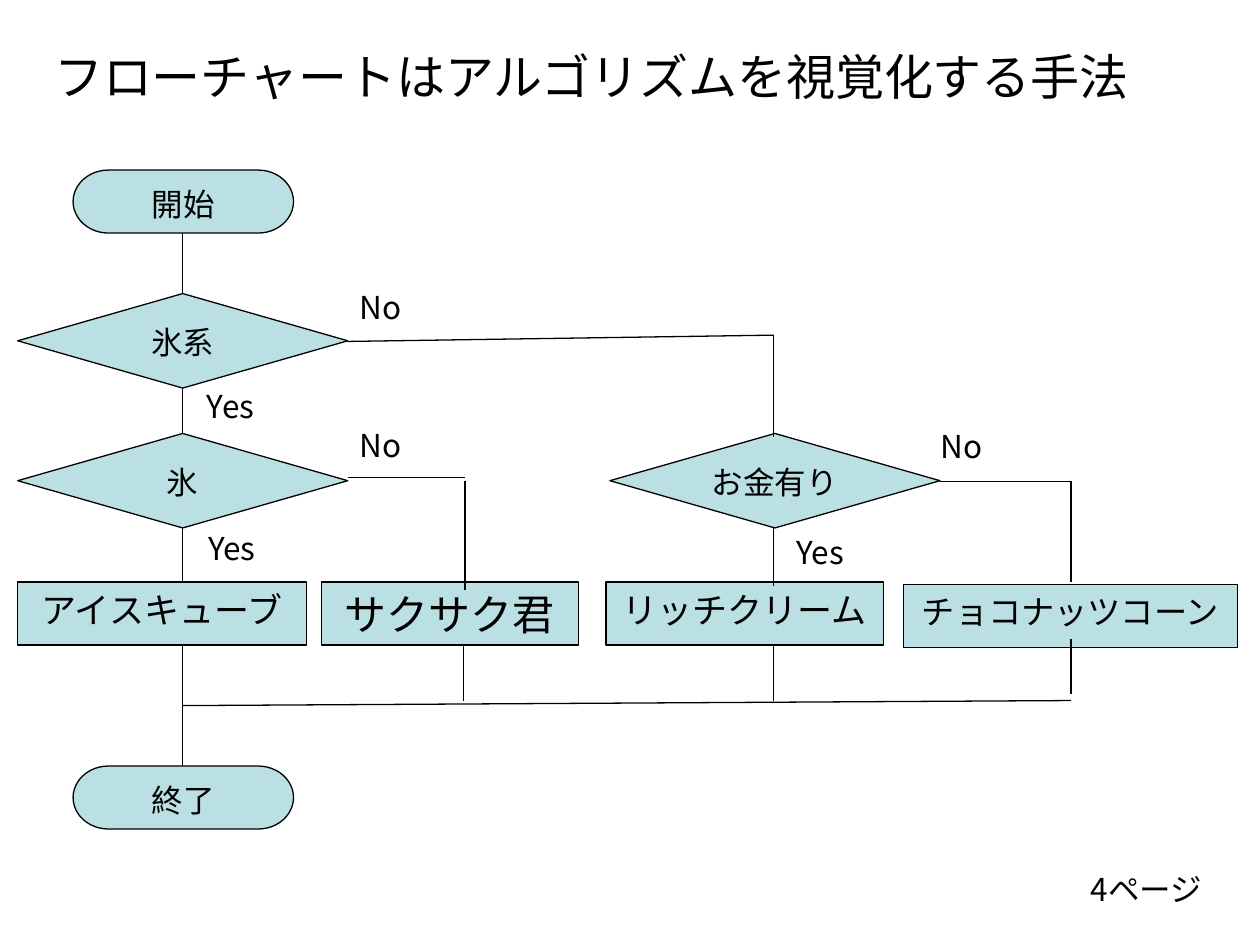
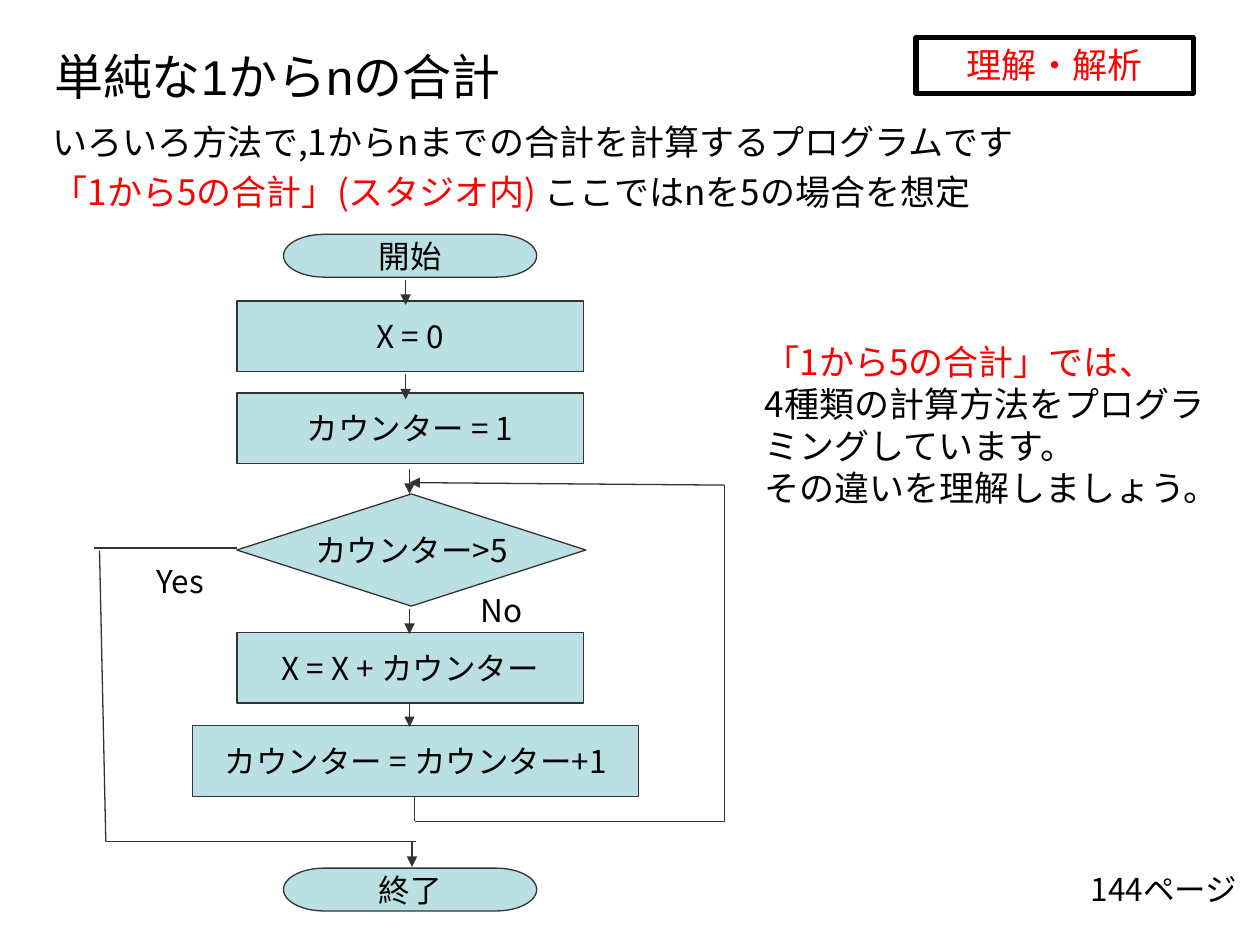
from lxml.etree import SubElement
from pptx import Presentation
from pptx.dml.color import RGBColor
from pptx.enum.shapes import MSO_CONNECTOR, MSO_SHAPE
from pptx.enum.text import MSO_ANCHOR, MSO_AUTO_SIZE, PP_ALIGN
from pptx.oxml.ns import qn
from pptx.util import Inches, Pt

BLACK = RGBColor(0x00, 0x00, 0x00)
DARK_GRAY = RGBColor(0x33, 0x33, 0x33)
PALE_TEAL = RGBColor(0xBB, 0xE0, 0xE3)
RED = RGBColor(0xFF, 0x00, 0x00)
TITLE_FONT = "Arial"
BODY_FONT = "Noto Sans CJK JP"
TERMINATOR = MSO_SHAPE.FLOWCHART_TERMINATOR
DECISION = MSO_SHAPE.FLOWCHART_DECISION
PROCESS = MSO_SHAPE.FLOWCHART_PROCESS


def add_run(paragraph, text, size=18, color=BLACK, font=BODY_FONT):
    run = paragraph.add_run()
    run.text = text
    run.font.size = Pt(size)
    run.font.name = font
    run.font.color.rgb = color
    SubElement(run._r.get_or_add_rPr(), qn("a:ea"), typeface=BODY_FONT)


def add_link(slide, x1, y1, x2, y2, color, arrow=False):
    link = slide.shapes.add_connector(
        MSO_CONNECTOR.STRAIGHT, Inches(x1), Inches(y1), Inches(x2), Inches(y2))
    link.line.color.rgb = color
    link.line.width = Pt(0.75)
    if arrow:
        SubElement(link.line._get_or_add_ln(), qn("a:tailEnd"), type="triangle")
    SubElement(link._element.spPr, qn("a:effectLst"))


trunk_x, branch_x, cone_x = 1.45, 6.14, 8.5
ice_cream_chart = {
    "title": "フローチャートはアルゴリズムを視覚化する手法",
    "color": BLACK,
    "anchor": MSO_ANCHOR.TOP,
    "wrap": True,
    "trunk": [(trunk_x, 1.85, trunk_x, 4.62)],
    "steps": [
        (TERMINATOR, 0.58, 1.35, 1.75, 0.5, "開始", 18),
        (TERMINATOR, 0.58, 6.08, 1.75, 0.5, "終了", 18),
        (DECISION, 0.14, 2.33, 2.62, 0.75, "氷系", 18),
        (DECISION, 0.14, 3.44, 2.62, 0.75, "氷", 18),
        (DECISION, 4.84, 3.44, 2.62, 0.75, "お金有り", 18),
        (PROCESS, 0.14, 4.62, 2.29, 0.5, "アイスキューブ", 20),
        (PROCESS, 2.55, 4.62, 2.04, 0.5, "サクサク君", 24),
        (PROCESS, 4.81, 4.62, 2.2, 0.5, "リッチクリーム", 20),
        (PROCESS, 7.17, 4.64, 2.65, 0.5, "チョコナッツコーン", 19),
    ],
    "links": [
        (branch_x, 4.19, branch_x, 4.65),
        (3.69, 3.82, 3.69, 4.68),
        (cone_x, 3.82, cone_x, 4.62),
        (2.76, 3.79, 3.69, 3.79),
        (7.46, 3.82, cone_x, 3.82),
        (branch_x, 2.66, branch_x, 3.47),
        (2.76, 2.71, branch_x, 2.66),
        (trunk_x, 5.12, trunk_x, 6.08),
        (3.68, 5.12, 3.68, 5.56),
        (branch_x, 5.12, branch_x, 5.56),
        (cone_x, 5.07, cone_x, 5.51),
        (trunk_x, 5.6, cone_x, 5.56),
    ],
    "arrows": [],
    "answers": [
        (1.33, 3.02, 1, "Yes"), (1.34, 4.15, 1, "Yes"), (6.01, 4.18, 1, "Yes"),
        (2.52, 2.24, 1, "No"), (2.52, 3.33, 1, "No"), (7.13, 3.34, 1, "No"),
    ],
    "page": "4ページ",
}

loop_x, exit_x = 5.75, 0.84
arrow_length = 0.2
sum_chart = {
    "title": "単純な1からnの合計",
    "color": DARK_GRAY,
    "anchor": MSO_ANCHOR.MIDDLE,
    "wrap": False,
    "trunk": [],
    "steps": [
        (TERMINATOR, 2.25, 1.86, 2.01, 0.34, "開始", 18),
        (PROCESS, 1.88, 2.39, 2.75, 0.56, "X = 0", 18),
        (PROCESS, 1.88, 3.12, 2.75, 0.56, "カウンター = 1", 18),
        (DECISION, 1.88, 3.92, 2.77, 0.89, "カウンター>5", 18),
        (PROCESS, 1.88, 5.02, 2.75, 0.56, "X = X + カウンター", 18),
        (PROCESS, 1.53, 5.76, 3.54, 0.56, "カウンター = カウンター+1", 18),
        (TERMINATOR, 2.25, 6.89, 2.01, 0.34, "終了", 18),
    ],
    "links": [
        (loop_x, 3.85, loop_x, 6.52),
        (3.29, 6.32, 3.29, 6.52),
        (loop_x, 6.52, 3.29, 6.52),
        (1.88, 4.35, 0.75, 4.35),
        (0.79, 4.37, exit_x, 6.68),
        (3.3, 6.68, exit_x, 6.68),
    ],
    "arrows": [(loop_x, 3.85, 3.25, 3.83)] + [
        (x, y, x, y + arrow_length)
        for x, y in [(3.22, 2.22), (3.22, 2.97), (3.25, 3.72),
                     (3.25, 4.83), (3.25, 5.57), (3.27, 6.68)]
    ],
    "answers": [(1.04, 4.41, 0.78, "Yes"), (3.49, 4.64, 0.98, "No")],
    "page": "144ページ",
}

deck = Presentation()
deck.slide_width, deck.slide_height = Inches(10), Inches(7.5)

for chart in (ice_cream_chart, sum_chart):
    slide = deck.slides.add_slide(deck.slide_layouts[5])
    color = chart["color"]

    heading = slide.shapes.title
    heading.left, heading.top = Inches(0.33), Inches(0.22)
    heading.width, heading.height = Inches(9.42), Inches(0.67)
    heading.text_frame.auto_size = MSO_AUTO_SIZE.NONE
    heading.text_frame.vertical_anchor = MSO_ANCHOR.BOTTOM
    heading.text_frame.paragraphs[0].alignment = PP_ALIGN.LEFT
    add_run(heading.text_frame.paragraphs[0], chart["title"], 28, font=TITLE_FONT)

    for ends in chart["trunk"]:
        add_link(slide, *ends, color)

    for kind, left, top, width, height, label, size in chart["steps"]:
        step = slide.shapes.add_shape(
            kind, Inches(left), Inches(top), Inches(width), Inches(height))
        step.shadow.inherit = False
        step.fill.solid()
        step.fill.fore_color.rgb = PALE_TEAL
        step.line.color.rgb = color
        step.line.width = Pt(0.75)
        step.text_frame.word_wrap = chart["wrap"]
        step.text_frame.vertical_anchor = chart["anchor"]
        step.text_frame.paragraphs[0].alignment = PP_ALIGN.CENTER
        add_run(step.text_frame.paragraphs[0], label, size)

    for ends in chart["links"]:
        add_link(slide, *ends, color)
    for ends in chart["arrows"]:
        add_link(slide, *ends, color, arrow=True)

    captions = [(*answer, PP_ALIGN.CENTER) for answer in chart["answers"]]
    captions.append((8.56, 6.86, 1.44, chart["page"], PP_ALIGN.LEFT))
    for left, top, width, label, alignment in captions:
        caption = slide.shapes.add_textbox(
            Inches(left), Inches(top), Inches(width), Inches(0.4)).text_frame
        caption.word_wrap = True
        caption.paragraphs[0].alignment = alignment
        add_run(caption.paragraphs[0], label)

intro = slide.shapes.add_textbox(
    Inches(0.32), Inches(0.84), Inches(9.65), Inches(0.91)).text_frame
intro.word_wrap = True
summary = intro.paragraphs[0]
summary.line_spacing = 1.2
add_run(summary, "いろいろ方法で,1からnまでの合計を計算するプログラムです", 20)
summary.add_line_break()
add_run(summary, "「1から5の合計」(スタジオ内) ", 20, RED)
add_run(summary, "ここではnを5の場合を想定", 20)

badge = slide.shapes.add_shape(
    MSO_SHAPE.RECTANGLE, Inches(7.27), Inches(0.3), Inches(2.2), Inches(0.44))
badge.shadow.inherit = False
badge.fill.background()
badge.line.color.rgb = BLACK
badge.line.width = Pt(3)
badge.text_frame.vertical_anchor = MSO_ANCHOR.TOP
badge.text_frame.paragraphs[0].alignment = PP_ALIGN.CENTER
add_run(badge.text_frame.paragraphs[0], "理解・解析", 20, RED)

remark = slide.shapes.add_textbox(
    Inches(5.97), Inches(2.65), Inches(3.78), Inches(1.45)).text_frame
remark.word_wrap = True
add_run(remark.paragraphs[0], "「1から5の合計」では、", 20, RED)
explanation = remark.add_paragraph()
add_run(explanation, "4種類の計算方法をプログラミングしています。", 20)
explanation.add_line_break()
add_run(explanation, "その違いを理解しましょう。", 20)

deck.save("out.pptx")
